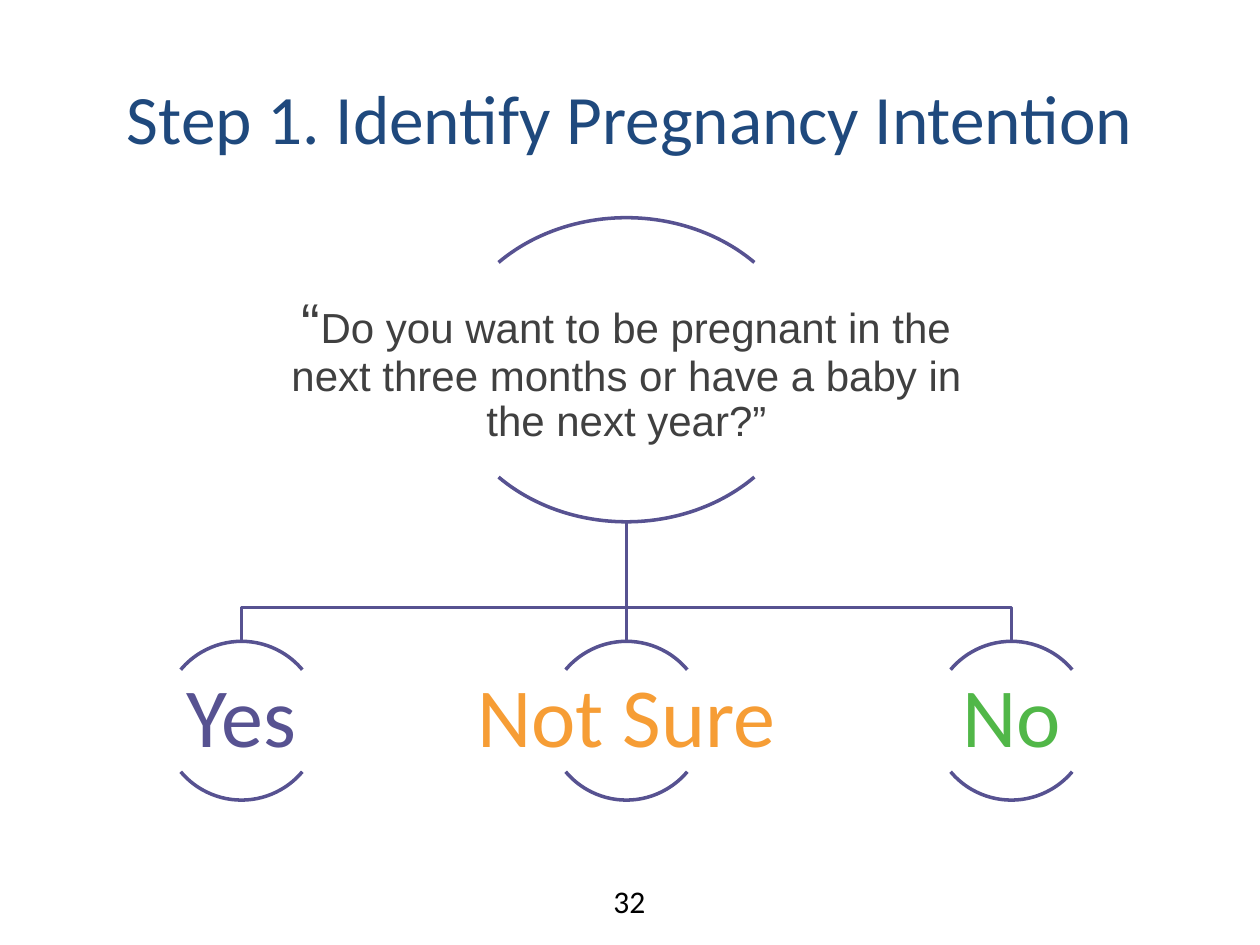
import pptx
import pptx.dml.color
import pptx.enum.shapes
import pptx.enum.text
import pptx.util
from pptx.util import Cm

COLORS = {
    "title": "1F497D",
    "purple": "575291",
    "orange": "F69D35",
    "green": "51B748",
    "question": "404040",
    "number": "000000",
}


def add_text(s, left, top, width, height, runs, inset=None, middle=True, spacing=None):
    sp = s.shapes.add_textbox(Cm(left), Cm(top), Cm(width), Cm(height))
    tf = sp.text_frame
    tf.word_wrap = True
    if middle:
        tf.vertical_anchor = pptx.enum.text.MSO_ANCHOR.MIDDLE
    if inset is not None:
        tf.margin_left = tf.margin_right = Cm(inset)
        tf.margin_top = tf.margin_bottom = Cm(inset)
    p = tf.paragraphs[0]
    p.alignment = pptx.enum.text.PP_ALIGN.CENTER
    if spacing:
        p.line_spacing = spacing
    for text, size, font, color in runs:
        r = p.add_run()
        r.text = text
        r.font.size = pptx.util.Pt(size)
        r.font.name = font
        r.font.color.rgb = pptx.dml.color.RGBColor.from_string(COLORS[color])


def style_line(sp):
    sp.fill.background()
    sp.line.color.rgb = pptx.dml.color.RGBColor.from_string(COLORS["purple"])
    sp.line.width = pptx.util.Pt(2)
    sp.shadow.inherit = False


prs = pptx.Presentation()
prs.slide_width = Cm(25.4)
prs.slide_height = Cm(19.05)
s = prs.slides.add_slide(prs.slide_layouts[6])

add_text(s, 1.27, 0.76, 22.86, 3.18,
         [("Step 1. Identify Pregnancy Intention", 39.6, "Calibri", "title")])
add_text(s, 9.73, 17.65, 5.92, 1.02, [("32", 18, "Calibri", "number")], middle=False)

center, gap = 12.63, 7.76
question_top, question_width, question_height = 4.39, 7.28, 6.13
question_bottom = question_top + question_height
branch_y, answer_top, answer_size = 12.25, 12.93, 3.2
answers = [
    ("Yes", "purple", center - gap),
    ("Not Sure", "orange", center),
    ("No", "green", center + gap),
]

for text, color, x in answers:
    points = [(center, branch_y), (x, branch_y), (x, answer_top)]
    if x == center:
        points = [(x, answer_top)]
    fb = s.shapes.build_freeform(Cm(center), Cm(question_bottom))
    fb.add_line_segments([(Cm(px), Cm(py)) for px, py in points], close=False)
    style_line(fb.convert_to_shape())

circles = [(center, question_top, question_width, question_height)]
circles += [(x, answer_top, answer_size, answer_size) for text, color, x in answers]
for x, top, width, height in circles:
    for start, end in ((132, 192), (24, 84)):
        sp = s.shapes.add_shape(pptx.enum.shapes.MSO_SHAPE.ARC,
                                Cm(x - width / 2), Cm(top), Cm(width), Cm(height))
        sp.adjustments[0] = start
        sp.adjustments[1] = end
        style_line(sp)

add_text(s, center - 7.28, 5.51, 14.56, 3.91, [
    ("“", 32, "Arial", "question"),
    ("Do you want to be pregnant in the next three months or have a baby in the next year?”",
     24, "Arial", "question"),
], inset=0.05, spacing=0.9)
for text, color, x in answers:
    add_text(s, x - answer_size, 13.49, 2 * answer_size, 2.06,
             [(text, 48, "Calibri", color)], inset=0.08, spacing=0.9)

prs.save("out.pptx")
